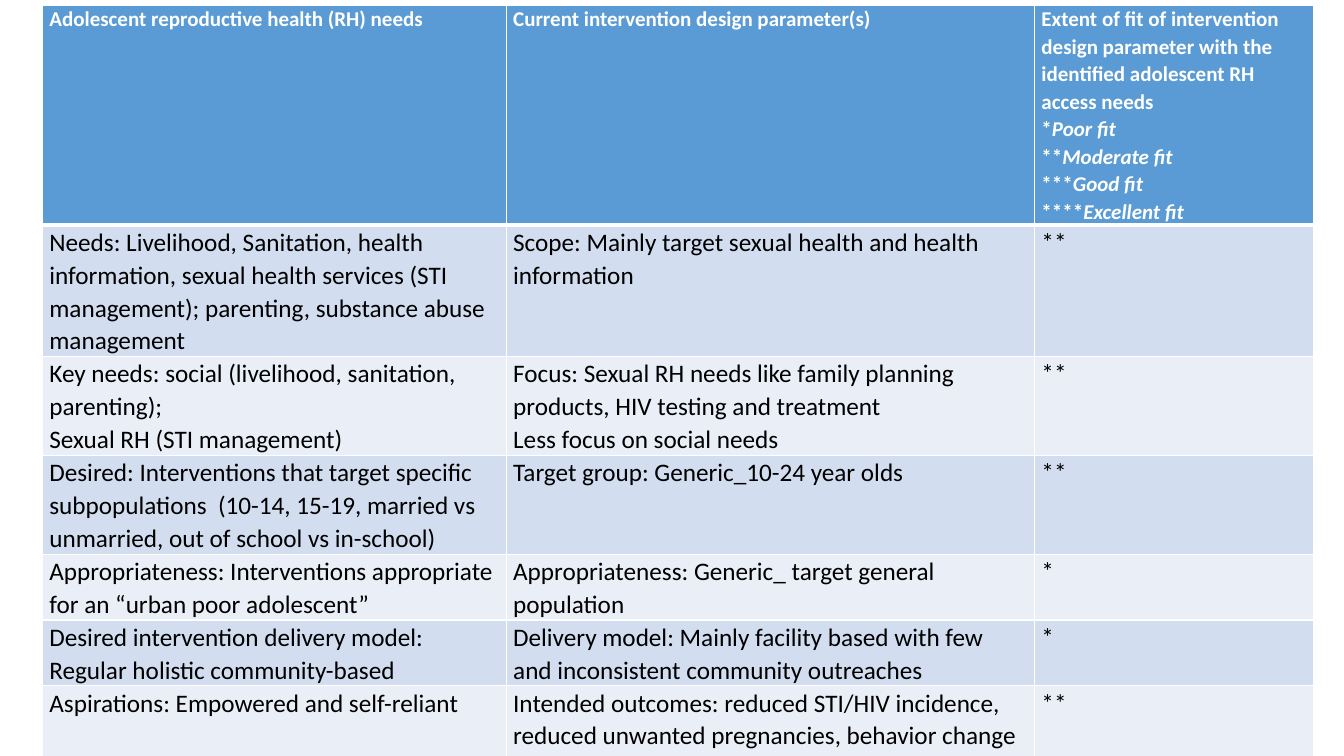
import dataclasses

import pptx
import pptx.dml.color
import pptx.oxml
import pptx.oxml.ns
import pptx.util

Inches = pptx.util.Inches
WHITE = "FFFFFF"


@dataclasses.dataclass(frozen=True)
class Style:
    size: float
    color: str
    bold: bool
    fills: tuple[str, ...]


@dataclasses.dataclass(frozen=True)
class Row:
    height: float
    need: str
    design: str
    fit: str


HEAD = Style(15, WHITE, True, ("5B9BD5",))
BODY = Style(18, "000000", False, ("D2DEEF", "EAEFF7"))
WIDTHS = (4.6, 5.24, 2.77)
LEVELS = ("Poor fit", "Moderate fit", "Good fit", "Excellent fit")
LEGEND = "\n".join("*" * count + level for count, level in enumerate(LEVELS, 1))
ROWS = (
    Row(2.1, "Adolescent reproductive health (RH) needs",
        "Current intervention design parameter(s)",
        "Extent of fit of intervention design parameter with the identified "
        "adolescent RH access needs\n" + LEGEND),
    Row(1.25, "Needs: Livelihood, Sanitation, health information, sexual health "
        "services (STI management); parenting, substance abuse management",
        "Scope: Mainly target sexual health and health information", "**"),
    Row(0.94, "Key needs: social (livelihood, sanitation, parenting);\n"
        "Sexual RH (STI management)",
        "Focus: Sexual RH needs like family planning products, HIV testing "
        "and treatment\nLess focus on social needs", "**"),
    Row(0.94, "Desired: Interventions that target specific subpopulations  "
        "(10-14, 15-19, married vs unmarried, out of school vs in-school)",
        "Target group: Generic_10-24 year olds", "**"),
    Row(0.63, "Appropriateness: Interventions appropriate for an “urban poor adolescent”",
        "Appropriateness: Generic_ target general population", "*"),
    Row(0.63, "Desired intervention delivery model: Regular holistic community-based",
        "Delivery model: Mainly facility based with few and inconsistent "
        "community outreaches", "*"),
    Row(1.04, "Aspirations: Empowered and self-reliant",
        "Intended outcomes: reduced STI/HIV incidence, reduced unwanted "
        "pregnancies, behavior change", "**"),
)


def paint(target, color: str) -> None:
    target.rgb = pptx.dml.color.RGBColor.from_string(color)


def write(para, text: str, *, size: float, color: str, bold: bool,
          italic: bool = False) -> None:
    run = para.add_run()
    run.text = text
    run.font.name = "Calibri"
    run.font.size = pptx.util.Pt(size)
    run.font.bold = bold
    run.font.italic = italic
    paint(run.font.color, color)


def edge(cell, side: str, points: float) -> None:
    width = pptx.util.Pt(points)
    space = pptx.oxml.ns.nsdecls("a")
    line = pptx.oxml.parse_xml(
        f'<a:ln{side} {space} w="{width}"><a:solidFill>'
        f'<a:srgbClr val="{WHITE}"/></a:solidFill></a:ln{side}>')
    cell._tc.get_or_add_tcPr().append(line)


def fill_cell(cell, text: str, style: Style, index: int) -> None:
    cell.margin_left = cell.margin_right = Inches(0.07)
    cell.margin_top = cell.margin_bottom = 0
    thick = {(0, "B"), (1, "T")}
    for side in "LRTB":
        edge(cell, side, 3 if (index, side) in thick else 1)
    cell.fill.solid()
    paint(cell.fill.fore_color, style.fills[(index - 1) % len(style.fills)])
    frame = cell.text_frame
    for number, line in enumerate(text.split("\n")):
        para = frame.add_paragraph() if number else frame.paragraphs[0]
        para.line_spacing = 1.07
        label = line.lstrip("*")
        stars = line[:len(line) - len(label)]
        for part, slant in ((stars, False), (label, bool(stars))):
            if part:
                write(para, part, size=style.size, color=style.color,
                      bold=style.bold, italic=slant)


def main() -> None:
    deck = pptx.Presentation()
    deck.slide_width, deck.slide_height = Inches(13.33), Inches(7.5)
    slide = deck.slides.add_slide(deck.slide_layouts[6])
    height = sum(row.height for row in ROWS)
    table = slide.shapes.add_table(
        len(ROWS), len(WIDTHS), Inches(0.42), Inches(0.05),
        Inches(sum(WIDTHS)), Inches(height)).table
    for column, width in zip(table.columns, WIDTHS):
        column.width = Inches(width)
    for index, row in enumerate(ROWS):
        table.rows[index].height = Inches(row.height)
        style = BODY if index else HEAD
        for place, text in enumerate((row.need, row.design, row.fit)):
            fill_cell(table.cell(index, place), text, style, index)
    deck.save("out.pptx")


if __name__ == "__main__":
    main()
